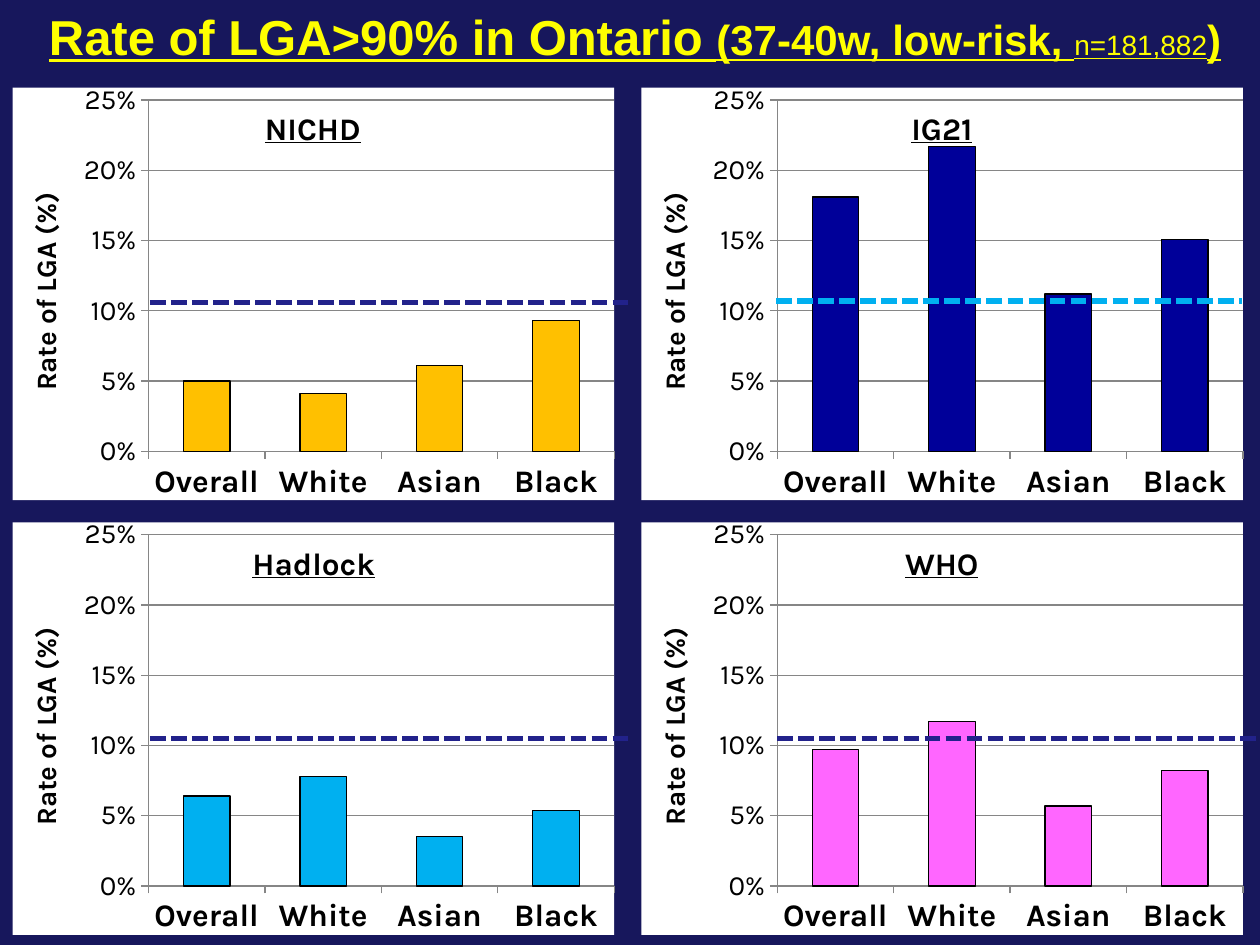
import pptx
import pptx.util
import pptx.dml.color
import pptx.chart.data
import pptx.enum.chart
import pptx.enum.dml
import pptx.enum.shapes
import pptx.enum.text
import pptx.oxml
import pptx.oxml.ns

Inches, Pt = pptx.util.Inches, pptx.util.Pt
qn = pptx.oxml.ns.qn

TITLE = [
    ("Rate of LGA>90% in Ontario ", 28, True),
    ("(37-40w, low-risk, ", 24, True),
    ("n=181,882", 16, False),
    (")", 24, True),
]
GROUPS = ["Overall", "White", "Asian", "Black"]
CHARTS = [
    ("NICHD", 0, 0, "FFC000", [0.05, 0.041, 0.061, 0.093], 1.96),
    ("Hadlock", 0, 1, "00B0F0", [0.064, 0.078, 0.035, 0.054], 1.86),
    ("IG21", 1, 0, "000099", [0.181, 0.217, 0.112, 0.151], 2.1),
    ("WHO", 1, 1, "FF66FF", [0.097, 0.117, 0.057, 0.082], 2.05),
]
TEN_PERCENT_LINES = [
    (1.19, 2.4, 3.8, "22228B"),
    (1.19, 5.86, 3.8, "22228B"),
    (6.17, 5.86, 3.8, "22228B"),
    (6.16, 2.39, 3.7, "00B0F0"),
]
COLUMNS, ROWS = [0.1, 5.09], [0.67, 4.12]
CHART_W, CHART_H = 4.78, 3.3
CHART_SIZE = {"x": CHART_W, "y": CHART_H, "w": CHART_W, "h": CHART_H}


def rgb(value):
    return pptx.dml.color.RGBColor.from_string(value)


def style(font, size, bold, color="000000", name="Karla", underline=None):
    font.size, font.bold, font.name = Pt(size), bold, name
    font.underline = underline
    font.color.rgb = rgb(color)


def set_layout(element, index, **inches):
    for old in element.findall(qn("c:layout")):
        element.remove(old)
    modes = "".join(f'<c:{k}Mode val="edge"/>' for k in "xy")
    places = "".join(f'<c:{k} val="{v / CHART_SIZE[k]}"/>' for k, v in inches.items())
    target = '<c:layoutTarget val="inner"/>' if "w" in inches else ""
    element.insert(index, pptx.oxml.parse_xml(
        f'<c:layout {pptx.oxml.ns.nsdecls("c")}><c:manualLayout>'
        f"{target}{modes}{places}</c:manualLayout></c:layout>"))


def add_title(title, text, size, x, y, underline=None):
    tf = title.text_frame
    tf.text = text
    style(tf.paragraphs[0].font, size, True, underline=underline)
    set_layout(title._element, 1, x=x, y=y)
    return tf


def style_axis(axis, size, bold):
    style(axis.tick_labels.font, size, bold)
    axis.major_tick_mark = pptx.enum.chart.XL_TICK_MARK.OUTSIDE
    axis.format.line.color.rgb = rgb("868686")


def add_rate_chart(slide, name, col, row, color, values, title_x):
    data = pptx.chart.data.CategoryChartData(number_format="0.0%")
    data.categories = GROUPS
    data.add_series(name, values)
    chart = slide.shapes.add_chart(
        pptx.enum.chart.XL_CHART_TYPE.COLUMN_CLUSTERED,
        Inches(COLUMNS[col]), Inches(ROWS[row]),
        Inches(CHART_W), Inches(CHART_H), data).chart
    style(chart.font, 10, False)
    chart.has_legend = False
    chart.has_title = True
    add_title(chart.chart_title, name, 18, title_x, 0.12, underline=True)
    chart.chart_title.include_in_layout = True

    space = chart._chartSpace
    space.chart.addnext(pptx.oxml.parse_xml(
        f'<c:spPr {pptx.oxml.ns.nsdecls("c", "a")}><a:solidFill>'
        '<a:srgbClr val="FFFFFF"/></a:solidFill><a:ln><a:noFill/></a:ln></c:spPr>'))
    set_layout(space.chart.plotArea, 0, x=1.08, y=0.1, w=3.7, h=2.81)

    style_axis(chart.category_axis, 18, True)
    axis = chart.value_axis
    style_axis(axis, 16, False)
    axis.minimum_scale, axis.maximum_scale, axis.major_unit = 0, 0.25, 0.05
    axis.tick_labels.number_format = "0%"
    axis.tick_labels.number_format_is_linked = False
    axis.has_major_gridlines = True
    axis.major_gridlines.format.line.color.rgb = rgb("868686")
    tf = add_title(axis.axis_title, "Rate of LGA (%)", 16, 0.08, 0.81)
    body = tf._txBody.find(qn("a:bodyPr"))
    body.set("rot", "-5400000")
    body.set("vert", "horz")

    plot = chart.plots[0]
    plot.gap_width = 150
    plot.vary_by_categories = False
    bars = plot.series[0].format
    bars.fill.solid()
    bars.fill.fore_color.rgb = rgb(color)
    bars.line.color.rgb = rgb("000000")
    bars.line.width = Pt(0.75)


def add_dashed_line(slide, x, y, width, color):
    line = slide.shapes.add_connector(
        pptx.enum.shapes.MSO_CONNECTOR.STRAIGHT,
        Inches(x), Inches(y), Inches(x + width), Inches(y))
    line.line.color.rgb = rgb(color)
    line.line.width = Pt(3)
    line.line.dash_style = pptx.enum.dml.MSO_LINE.SQUARE_DOT
    line._element.spPr.append(pptx.oxml.parse_xml(
        f'<a:effectLst {pptx.oxml.ns.nsdecls("a")}/>'))


def add_heading(slide):
    sp = slide.shapes.title
    sp.left, sp.top = Inches(0.25), Inches(0)
    sp.width, sp.height = Inches(9.58), Inches(0.57)
    tf = sp.text_frame
    tf.word_wrap = True
    tf.auto_size = pptx.enum.text.MSO_AUTO_SIZE.NONE
    tf.vertical_anchor = pptx.enum.text.MSO_ANCHOR.MIDDLE
    tf.margin_left = tf.margin_right = 0
    p = tf.paragraphs[0]
    p.alignment = pptx.enum.text.PP_ALIGN.CENTER
    for text, size, bold in TITLE:
        r = p.add_run()
        r.text = text
        style(r.font, size, bold, "FFFF00", "Arial", True)


def main():
    prs = pptx.Presentation()
    prs.slide_width, prs.slide_height = Inches(10), Inches(7.5)
    slide = prs.slides.add_slide(prs.slide_layouts[5])
    slide.background.fill.solid()
    slide.background.fill.fore_color.rgb = rgb("17175C")
    add_heading(slide)
    for chart in CHARTS:
        add_rate_chart(slide, *chart)
    for line in TEN_PERCENT_LINES:
        add_dashed_line(slide, *line)
    prs.save("out.pptx")


if __name__ == "__main__":
    main()
